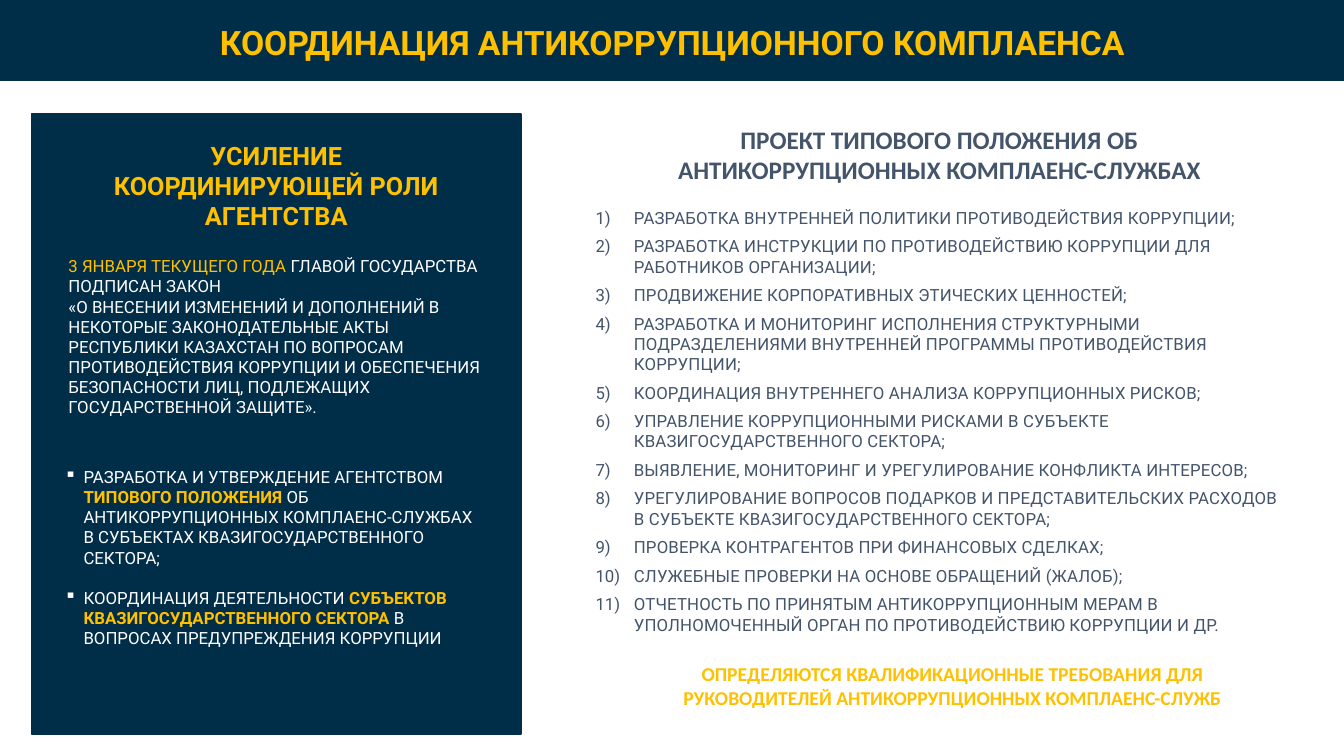
from dataclasses import dataclass

from pptx import Presentation
from pptx.dml.color import RGBColor
from pptx.enum import shapes, text
from pptx.oxml.ns import qn
from pptx.util import Pt
from lxml import etree


@dataclass(frozen=True)
class Theme:
    navy: str = "002D48"
    gold: str = "FFC000"
    white: str = "FFFFFF"
    slate: str = "44546A"
    body_font: str = "Roboto"
    head_font: str = "Calibri"
    title: float = 24
    heading: float = 18
    note: float = 14
    body: float = 12


T = Theme()

# Each paragraph is a list of (text, colour, bold) runs
LAW = [
    [("3 ЯНВАРЯ ТЕКУЩЕГО ГОДА ", T.gold, False),
     ("ГЛАВОЙ ГОСУДАРСТВА ПОДПИСАН ЗАКОН", T.white, False)],
    [("«О ВНЕСЕНИИ ИЗМЕНЕНИЙ И ДОПОЛНЕНИЙ В НЕКОТОРЫЕ ЗАКОНОДАТЕЛЬНЫЕ АКТЫ "
      "РЕСПУБЛИКИ КАЗАХСТАН ПО ВОПРОСАМ ПРОТИВОДЕЙСТВИЯ КОРРУПЦИИ И ОБЕСПЕЧЕНИЯ "
      "БЕЗОПАСНОСТИ ЛИЦ, ПОДЛЕЖАЩИХ ГОСУДАРСТВЕННОЙ ЗАЩИТЕ».", T.white, False)],
]
AGENCY_TASKS = [
    [("РАЗРАБОТКА И УТВЕРЖДЕНИЕ АГЕНТСТВОМ ", T.white, False),
     ("ТИПОВОГО ПОЛОЖЕНИЯ ", T.gold, True),
     ("ОБ АНТИКОРРУПЦИОННЫХ КОМПЛАЕНС-СЛУЖБАХ В СУБЪЕКТАХ "
      "КВАЗИГОСУДАРСТВЕННОГО СЕКТОРА;", T.white, False)],
    [("КООРДИНАЦИЯ ДЕЯТЕЛЬНОСТИ ", T.white, False),
     ("СУБЪЕКТОВ КВАЗИГОСУДАРСТВЕННОГО СЕКТОРА ", T.gold, True),
     ("В ВОПРОСАХ ПРЕДУПРЕЖДЕНИЯ КОРРУПЦИИ", T.white, False)],
]
DUTIES = [
    "РАЗРАБОТКА ВНУТРЕННЕЙ ПОЛИТИКИ ПРОТИВОДЕЙСТВИЯ КОРРУПЦИИ;",
    "РАЗРАБОТКА ИНСТРУКЦИИ ПО ПРОТИВОДЕЙСТВИЮ КОРРУПЦИИ ДЛЯ РАБОТНИКОВ ОРГАНИЗАЦИИ;",
    "ПРОДВИЖЕНИЕ КОРПОРАТИВНЫХ ЭТИЧЕСКИХ ЦЕННОСТЕЙ;",
    "РАЗРАБОТКА И МОНИТОРИНГ ИСПОЛНЕНИЯ СТРУКТУРНЫМИ ПОДРАЗДЕЛЕНИЯМИ "
    "ВНУТРЕННЕЙ ПРОГРАММЫ ПРОТИВОДЕЙСТВИЯ КОРРУПЦИИ;",
    "КООРДИНАЦИЯ ВНУТРЕННЕГО АНАЛИЗА КОРРУПЦИОННЫХ РИСКОВ;",
    "УПРАВЛЕНИЕ КОРРУПЦИОННЫМИ РИСКАМИ В СУБЪЕКТЕ КВАЗИГОСУДАРСТВЕННОГО СЕКТОРА;",
    "ВЫЯВЛЕНИЕ, МОНИТОРИНГ И УРЕГУЛИРОВАНИЕ КОНФЛИКТА ИНТЕРЕСОВ;",
    "УРЕГУЛИРОВАНИЕ ВОПРОСОВ ПОДАРКОВ И ПРЕДСТАВИТЕЛЬСКИХ РАСХОДОВ "
    "В СУБЪЕКТЕ КВАЗИГОСУДАРСТВЕННОГО СЕКТОРА;",
    "ПРОВЕРКА КОНТРАГЕНТОВ ПРИ ФИНАНСОВЫХ СДЕЛКАХ;",
    "СЛУЖЕБНЫЕ ПРОВЕРКИ НА ОСНОВЕ ОБРАЩЕНИЙ (ЖАЛОБ);",
    "ОТЧЕТНОСТЬ ПО ПРИНЯТЫМ АНТИКОРРУПЦИОННЫМ МЕРАМ В УПОЛНОМОЧЕННЫЙ ОРГАН "
    "ПО ПРОТИВОДЕЙСТВИЮ КОРРУПЦИИ И ДР.",
]


def add_panel(s, x, y, w, h):
    sp = s.shapes.add_shape(shapes.MSO_SHAPE.RECTANGLE, Pt(x), Pt(y), Pt(w), Pt(h))
    sp.shadow.inherit = False
    sp.fill.solid()
    sp.fill.fore_color.rgb = RGBColor.from_string(T.navy)
    sp.line.color.rgb = RGBColor.from_string(T.navy)
    sp.line.width = Pt(1)


def add_text(s, box, paragraphs, size=T.body, font=T.body_font, align=None, gap=0):
    """Add a text box and return its text frame; gap separates paragraphs."""
    tf = s.shapes.add_textbox(*map(Pt, box)).text_frame
    tf.word_wrap = True
    tf.auto_size = text.MSO_AUTO_SIZE.SHAPE_TO_FIT_TEXT
    for i, runs in enumerate(paragraphs):
        p = tf.add_paragraph() if i else tf.paragraphs[0]
        p.alignment = align
        if gap:
            p.space_after = Pt(gap)
        for words, colour, bold in runs:
            r = p.add_run()
            r.text = words
            r.font.name = font
            r.font.size = Pt(size)
            r.font.bold = bold
            r.font.color.rgb = RGBColor.from_string(colour)
    return tf


def add_heading(s, box, words, size, font, colour):
    return add_text(s, box, [[(words, colour, True)]], size, font, text.PP_ALIGN.CENTER)


def set_bullets(tf, indent, tag, **attrs):
    """Give every paragraph a hanging indent and a bullet of the given kind."""
    for p in tf.paragraphs:
        pPr = p._p.get_or_add_pPr()
        pPr.set("marL", str(Pt(indent)))
        pPr.set("indent", str(-Pt(indent)))
        etree.SubElement(pPr, qn(tag), attrs)


def set_tracking(tf, points):
    for p in tf.paragraphs:
        for r in p.runs:
            r._r.get_or_add_rPr().set("spc", str(round(points * 100)))


def main():
    prs = Presentation()
    prs.slide_width, prs.slide_height = Pt(960), Pt(540)
    s = prs.slides.add_slide(prs.slide_layouts[6])

    # Title band
    add_panel(s, 0, 0, 960, 57.6)
    tf = add_heading(s, (59, 12.2, 842.4, 36), "КООРДИНАЦИЯ АНТИКОРРУПЦИОННОГО КОМПЛАЕНСА",
                     T.title, T.body_font, T.gold)
    tf.vertical_anchor = text.MSO_ANCHOR.MIDDLE

    # Left panel: role of the agency
    add_panel(s, 22.3, 81.4, 350, 442.8)
    add_heading(s, (56.2, 96.5, 282.2, 72.7), "УСИЛЕНИЕ КООРДИНИРУЮЩЕЙ РОЛИ АГЕНТСТВА",
                T.heading, T.body_font, T.gold)
    add_text(s, (41.8, 179.3, 310.3, 123.8), LAW)
    tf = add_text(s, (38.9, 329.8, 310.3, 138.2), AGENCY_TASKS, gap=14.4)
    set_bullets(tf, 13.7, "a:buChar", char="▪")

    # Right column: duties of the compliance services
    add_heading(s, (460.1, 85, 421.9, 51.1),
                "ПРОЕКТ ТИПОВОГО ПОЛОЖЕНИЯ ОБ АНТИКОРРУПЦИОННЫХ КОМПЛАЕНС-СЛУЖБАХ",
                T.heading, T.head_font, T.slate)
    tf = add_text(s, (418.3, 144.7, 504.7, 315.4),
                  [[(duty, T.slate, False)] for duty in DUTIES], gap=6)
    set_bullets(tf, 27.4, "a:buAutoNum", type="arabicParenR")
    set_tracking(tf, 0.1)
    add_heading(s, (442.8, 469.4, 475.2, 41),
                "ОПРЕДЕЛЯЮТСЯ КВАЛИФИКАЦИОННЫЕ ТРЕБОВАНИЯ ДЛЯ РУКОВОДИТЕЛЕЙ "
                "АНТИКОРРУПЦИОННЫХ КОМПЛАЕНС-СЛУЖБ", T.note, T.head_font, T.gold)

    prs.save("out.pptx")


if __name__ == "__main__":
    main()
